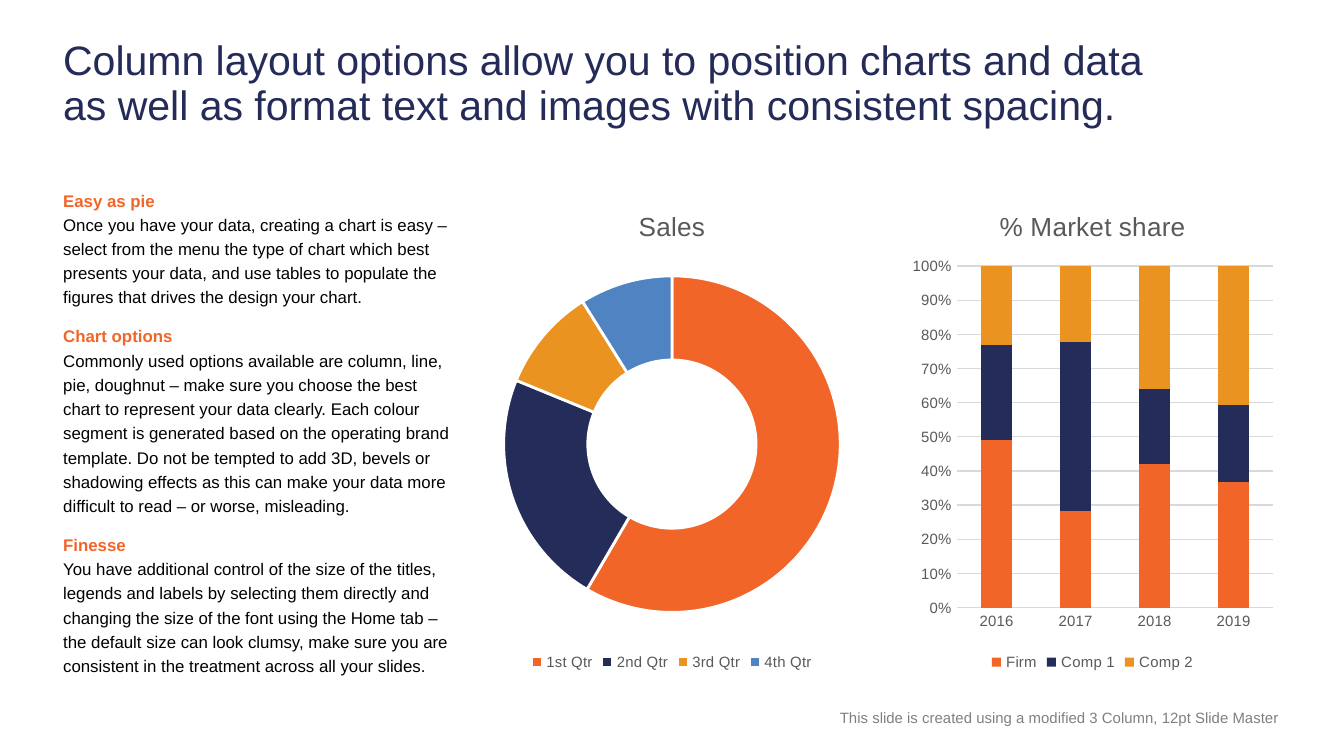
"""Build a slide with a text column, a doughnut chart and a stacked column chart."""
from lxml.etree import SubElement
from pptx import Presentation
from pptx.chart.data import CategoryChartData
from pptx.dml.color import RGBColor
from pptx.enum.chart import XL_CHART_TYPE, XL_LEGEND_POSITION, XL_TICK_MARK
from pptx.enum.text import MSO_ANCHOR, MSO_AUTO_SIZE, PP_ALIGN
from pptx.oxml.ns import qn
from pptx.util import Inches, Pt

COLOURS = {
    "orange": "F16628",
    "navy": "242C59",
    "title": "242B58",
    "amber": "EA9320",
    "blue": "5083C1",
    "black": "000000",
    "label": "595959",
    "grid": "D9D9D9",
    "note": "808080",
    "white": "FFFFFF",
}

TITLE_LINES = [
    "Column layout options allow you to position charts and data",
    "as well as format text and images with consistent spacing.",
]
SECTIONS = [
    ("Easy as pie",
     "Once you have your data, creating a chart is easy – select from the menu the type of chart "
     "which best presents your data, and use tables to populate the figures that drives the design "
     "your chart."),
    ("Chart options",
     "Commonly used options available are column, line, pie, doughnut – make sure you choose the "
     "best chart to represent your data clearly. Each colour segment is generated based on the "
     "operating brand template. Do not be tempted to add 3D, bevels or shadowing effects as this "
     "can make your data more difficult to read – or worse, misleading."),
    ("Finesse",
     "You have additional control of the size of the titles, legends and labels by selecting them "
     "directly and changing the size of the font using the Home tab –the default size can look "
     "clumsy, make sure you are consistent in the treatment across all your slides."),
]
FOOTNOTE = "This slide is created using a modified 3 Column, 12pt Slide Master"
QUARTERS = {"1st Qtr": 59, "2nd Qtr": 23, "3rd Qtr": 10, "4th Qtr": 9}
YEARS = ["2016", "2017", "2018", "2019"]
SHARES = {
    "Firm": [49, 28, 42, 37],
    "Comp 1": [28, 49, 22, 23],
    "Comp 2": [23, 22, 36, 41],
}
SERIES_COLOURS = ["orange", "navy", "amber", "blue"]
COLUMN_TOP, COLUMN_HEIGHT, CHART_WIDTH = 1.4, 3.63, 2.8


class SlideBuilder:
    """Hold the style and the current slide."""

    def __init__(self, page, font_name="Arial"):
        self.page = page
        self.font_name = font_name

    def colour(self, name):
        """Return a named colour."""
        return RGBColor.from_string(COLOURS[name])

    def style(self, font, size, colour, bold=False):
        """Format a font."""
        font.name = self.font_name
        font.size = Pt(size)
        font.bold = bold
        font.color.rgb = self.colour(colour)

    def span(self, para, text, size, colour, bold=False):
        """Add one formatted run."""
        span = para.add_run()
        span.text = text
        self.style(span.font, size, colour, bold)

    def place(self, box, left, top, width, height, anchor):
        """Position a text shape and return its frame without margins."""
        box.left, box.top = Inches(left), Inches(top)
        box.width, box.height = Inches(width), Inches(height)
        frame = box.text_frame
        frame.margin_left = frame.margin_right = frame.margin_top = frame.margin_bottom = 0
        frame.word_wrap = True
        frame.auto_size = MSO_AUTO_SIZE.NONE
        frame.vertical_anchor = anchor
        return frame

    def title(self, lines, *bounds):
        """Fill the title placeholder."""
        para = self.place(self.page.shapes.title, *bounds, MSO_ANCHOR.TOP).paragraphs[0]
        para.alignment = PP_ALIGN.LEFT
        para.line_spacing = 0.9
        for index, line in enumerate(lines):
            if index:
                para.add_line_break()
            self.span(para, line, 22, "title")

    def text_box(self, anchor, *bounds):
        """Add an empty text box and return its frame."""
        box = self.page.shapes.add_textbox(0, 0, 0, 0)
        return self.place(box, *bounds, anchor)

    def sections(self, sections, *bounds):
        """Add a column of headed paragraphs."""
        frame = self.text_box(MSO_ANCHOR.BOTTOM, *bounds)
        for index, (heading, body) in enumerate(sections):
            para = frame.add_paragraph() if index else frame.paragraphs[0]
            para.space_before = Pt(6 if index else 0)
            self.span(para, heading, 9, "orange", True)
            para = frame.add_paragraph()
            para.line_spacing = 1.2
            para.space_after = Pt(4)
            self.span(para, body, 9, "black")

    def footnote(self, text, *bounds):
        """Add a right-aligned note."""
        para = self.text_box(MSO_ANCHOR.MIDDLE, *bounds).paragraphs[0]
        para.alignment = PP_ALIGN.RIGHT
        self.span(para, text, 8, "note")

    def fill(self, item, colour):
        """Fill a chart series or point."""
        item.format.fill.solid()
        item.format.fill.fore_color.rgb = self.colour(colour)

    def chart(self, kind, title, categories, series, left, plot_layout):
        """Add a titled chart with a bottom legend and a fixed plot area."""
        data = CategoryChartData(number_format="0")
        data.categories = categories
        for name, values in series.items():
            data.add_series(name, values)
        chart = self.page.shapes.add_chart(
            kind, Inches(left), Inches(COLUMN_TOP), Inches(CHART_WIDTH), Inches(COLUMN_HEIGHT), data
        ).chart
        self.style(chart.font, 10, "black")
        chart.has_title = True
        self.span(chart.chart_title.text_frame.paragraphs[0], title, 14, "label")
        chart.has_legend = True
        chart.legend.position = XL_LEGEND_POSITION.BOTTOM
        chart.legend.include_in_layout = False
        self.style(chart.legend.font, 8, "label")
        plot_area = chart.plots[0]._element.getparent()
        for layout in plot_area.findall(qn("c:layout")):
            plot_area.remove(layout)
        layout = SubElement(plot_area, qn("c:layout"))
        plot_area.insert(0, layout)
        manual = SubElement(layout, qn("c:manualLayout"))
        settings = [("layoutTarget", "inner"), ("xMode", "edge"), ("yMode", "edge")]
        for tag, value in settings + list(zip("xywh", plot_layout)):
            SubElement(manual, qn(f"c:{tag}")).set("val", str(value))
        return chart

    def doughnut(self, title, values, left):
        """Add a doughnut chart."""
        chart = self.chart(XL_CHART_TYPE.DOUGHNUT, title, list(values),
                           {title: list(values.values())}, left, (0.05, 0.18, 0.9, 0.69))
        plot = chart.plots[0]
        plot.vary_by_categories = True
        plot.has_data_labels = False
        plot._element.find(qn("c:holeSize")).set("val", "75")
        for index, colour in enumerate(SERIES_COLOURS):
            point = plot.series[0].points[index]
            self.fill(point, colour)
            point.format.line.color.rgb = self.colour("white")
            point.format.line.width = Pt(1.5)

    def stacked_columns(self, title, categories, series, left):
        """Add a 100% stacked column chart."""
        chart = self.chart(XL_CHART_TYPE.COLUMN_STACKED_100, title, categories, series, left,
                           (0.14, 0.16, 0.84, 0.7))
        plot = chart.plots[0]
        plot.vary_by_categories = False
        plot.gap_width, plot.overlap = 150, 100
        for item, colour in zip(plot.series, SERIES_COLOURS):
            self.fill(item, colour)
        for axis in (chart.category_axis, chart.value_axis):
            axis.major_tick_mark = axis.minor_tick_mark = XL_TICK_MARK.NONE
            self.style(axis.tick_labels.font, 8, "label")
        values = chart.value_axis
        values.tick_labels.number_format = "0%"
        values.tick_labels.number_format_is_linked = False
        values.format.line.fill.background()
        values.has_major_gridlines = True
        for part in (values.major_gridlines, chart.category_axis):
            part.format.line.color.rgb = self.colour("grid")
            part.format.line.width = Pt(0.75)


def main():
    """Build and save the deck."""
    deck = Presentation()
    deck.slide_width = Inches(10)
    deck.slide_height = deck.slide_width * 9 // 16
    builder = SlideBuilder(deck.slides.add_slide(deck.slide_layouts[5]))
    builder.title(TITLE_LINES, 0.47, 0.3, 9.04, 1.09)
    builder.sections(SECTIONS, 0.47, COLUMN_TOP, 2.92, COLUMN_HEIGHT)
    builder.doughnut("Sales", QUARTERS, 3.6)
    builder.stacked_columns("% Market share", YEARS, SHARES, 6.73)
    builder.footnote(FOOTNOTE, 4.19, 5.09, 5.33, 0.49)
    deck.save("out.pptx")


if __name__ == "__main__":
    main()
